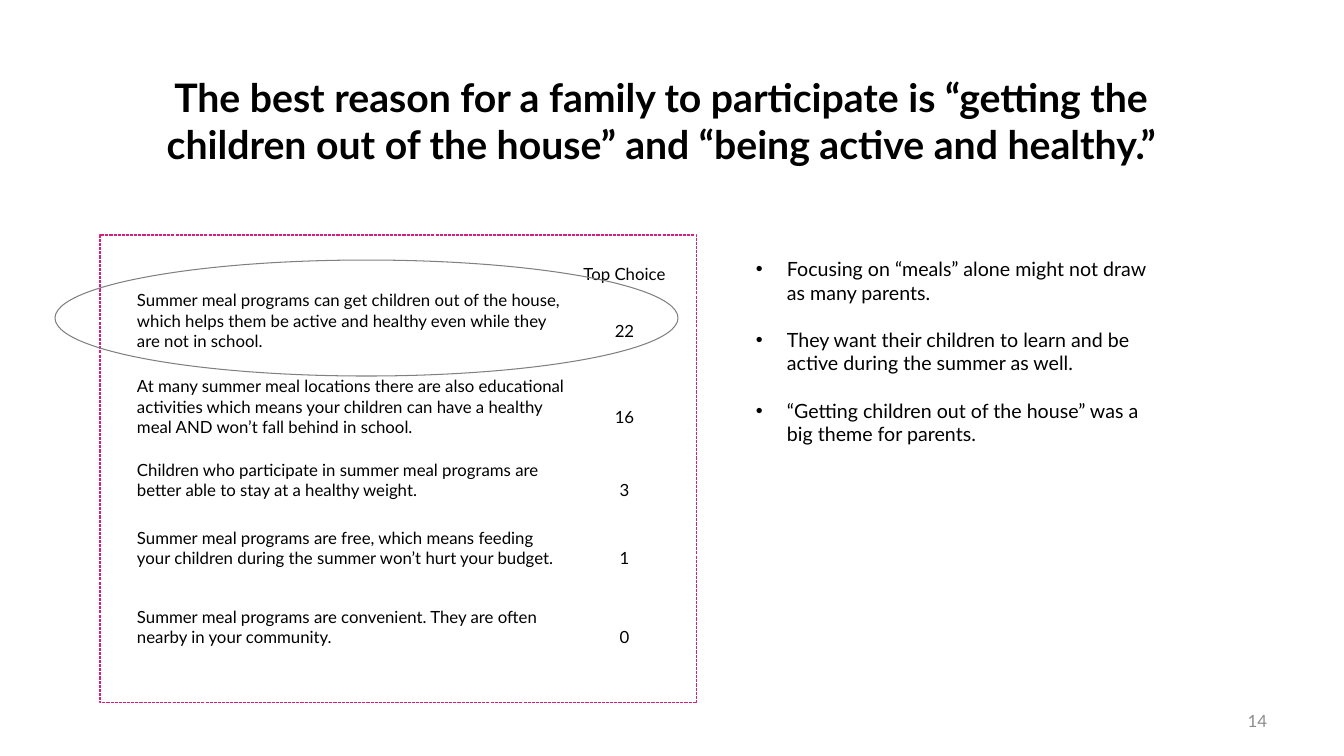
from lxml import etree
from pptx import Presentation
from pptx import util as u
from pptx.dml.color import RGBColor
from pptx.enum import dml, shapes, text
from pptx.oxml import ns

PX = 914400 / 100.8
BLACK = RGBColor(0x00, 0x00, 0x00)
WHITE = RGBColor(0xFF, 0xFF, 0xFF)
GREY = RGBColor(0x8C, 0x8C, 0x8C)
OVAL_GREY = RGBColor(0x80, 0x80, 0x80)
PINK = RGBColor(0xD5, 0x1F, 0x81)
LEFT, CENTER, RIGHT = text.PP_ALIGN.LEFT, text.PP_ALIGN.CENTER, text.PP_ALIGN.RIGHT

TITLE = ("The best reason for a family to participate is “getting the children "
         "out of the house” and “being active and healthy.”")
TAKEAWAYS = [
    "Focusing on “meals” alone might not draw as many parents.",
    "They want their children to learn and be active during the summer as well.",
    "“Getting children out of the house” was a big theme for parents.",
]
REASONS = [  # row height, reason, share choosing it first
    (28, "", "Top Choice"),
    (86, "Summer meal programs can get children out of the house, which helps them "
         "be active and healthy even while they are not in school.", "22"),
    (86, "At many summer meal locations there are also educational activities which "
         "means your children can have a healthy meal AND won’t fall behind in school.", "16"),
    (60, "Children who participate in summer meal programs are better able to stay "
         "at a healthy weight.", "3"),
    (74, "Summer meal programs are free, which means feeding your children during "
         "the summer won’t hurt your budget.", "1"),
    (84, "Summer meal programs are convenient. They are often nearby in your "
         "community.", "0"),
]


def px(*lengths):
    """Turn pixel lengths into a list of EMU."""
    return [u.Emu(round(length * PX)) for length in lengths]


def style(paragraph, size, color=BLACK, align=LEFT, bold=False):
    paragraph.alignment = align
    paragraph.font.name = "Lato"
    paragraph.font.size = u.Pt(size)
    paragraph.font.bold = bold
    paragraph.font.color.rgb = color


presentation = Presentation()
presentation.slide_width, presentation.slide_height = px(1344, 756)
slide = presentation.slides.add_slide(presentation.slide_layouts[6])

# Frame behind the table
frame = slide.shapes.add_shape(shapes.MSO_SHAPE.RECTANGLE, *px(100, 235, 597, 468))
frame.line.color.rgb = PINK
frame.line.dash_style = dml.MSO_LINE.SQUARE_DOT

# Table of reasons
table = slide.shapes.add_table(len(REASONS), 2, *px(136, 259, 543, 418)).table
table.first_row = table.horz_banding = False
table.columns[0].width, table.columns[1].width = px(434, 109)
for row, (height, reason, share) in enumerate(REASONS):
    table.rows[row].height = px(height)[0]
    for column, wording in enumerate((reason, share)):
        cell = table.cell(row, column)
        cell.vertical_anchor = text.MSO_ANCHOR.MIDDLE
        cell.margin_left, cell.margin_right, cell.margin_top = px(1, 1, 1)
        cell.margin_bottom = px(20 if column == 0 and reason else 0)[0]
        if column == 0:
            cell.fill.background()
        else:
            cell.fill.solid()
            cell.fill.fore_color.rgb = WHITE
        paragraph = cell.text_frame.paragraphs[0]
        paragraph.text = wording
        style(paragraph, 12, align=CENTER if column else LEFT)

# Title, takeaways and slide number
title, takeaways, number = [
    slide.shapes.add_textbox(*px(*box)).text_frame
    for box in ((100, 68, 1122, 105), (746, 252, 433, 224), (964, 701, 313, 40))]
for frame_text in (title, takeaways, number):
    frame_text.word_wrap = True

title.text = TITLE
style(title.paragraphs[0], 28, align=CENTER, bold=True)

takeaways.text = "\n".join(TAKEAWAYS)
for paragraph in takeaways.paragraphs:
    properties = paragraph._p.get_or_add_pPr()
    indent = px(31)[0]
    properties.set("marL", str(indent))
    properties.set("indent", str(-indent))
    etree.SubElement(properties, ns.qn("a:buFont"), typeface="Arial")
    etree.SubElement(properties, ns.qn("a:buChar"), char="•")
    style(paragraph, 14)
    paragraph.space_after = u.Pt(17)

number.text = "14"
number.vertical_anchor = text.MSO_ANCHOR.MIDDLE
style(number.paragraphs[0], 12, GREY, RIGHT)

# Oval around the top reason
oval = slide.shapes.add_shape(shapes.MSO_SHAPE.OVAL, *px(55, 260, 623, 116))
oval.line.color.rgb = OVAL_GREY

for shape in (frame, oval):
    shape.shadow.inherit = False
    shape.fill.background()
    shape.line.width = u.Pt(0.75)

presentation.save("out.pptx")
